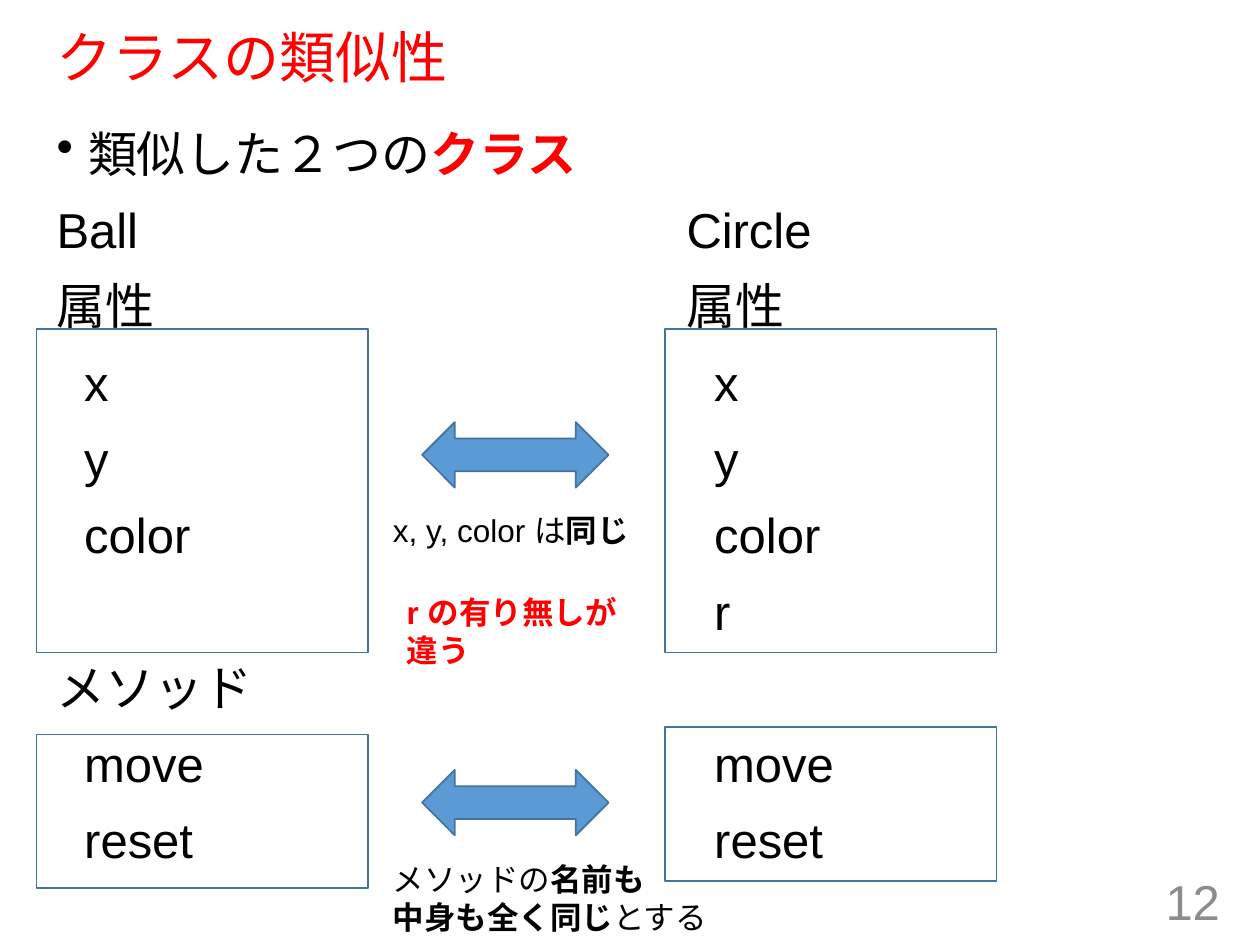
"""Build a slide comparing the similar classes Ball and Circle."""
import pptx
import pptx.util
import pptx.dml.color
import pptx.enum.shapes
import pptx.enum.text
import pptx.oxml.ns
from lxml import etree

Inches = pptx.util.Inches
Pt = pptx.util.Pt
SHAPE = pptx.enum.shapes.MSO_SHAPE
ALIGN = pptx.enum.text.PP_ALIGN
ANCHOR = pptx.enum.text.MSO_ANCHOR
RED, BLACK, GRAY = "FF0000", "000000", "8C8C8C"
BLUE, OUTLINE = "5B9BD5", "43739E"


def rgb(value):
    return pptx.dml.color.RGBColor.from_string(value)


def add_text(box, lines, size=18, align=ALIGN.LEFT, anchor=ANCHOR.TOP, before=0, bullet=False, stops=()):
    tf = s.shapes.add_textbox(*map(Inches, box)).text_frame
    tf.word_wrap = True
    tf.vertical_anchor = anchor
    for i, runs in enumerate(lines):
        p = tf.paragraphs[0] if i == 0 else tf.add_paragraph()
        pPr = p._p.get_or_add_pPr()
        if bullet and i == 0:
            pPr.set("marL", str(Inches(0.25)))
            pPr.set("indent", str(Inches(-0.25)))
            etree.SubElement(pPr, pptx.oxml.ns.qn("a:buChar"), char="•")
        elif stops:
            tabs = etree.SubElement(pPr, pptx.oxml.ns.qn("a:tabLst"))
            indent = runs[0][0].startswith("\t")
            for stop in stops if indent else stops[1:]:
                offset = 0 if indent else stops[0]
                etree.SubElement(tabs, pptx.oxml.ns.qn("a:tab"), pos=str(Inches(stop - offset)), algn="l")
        p.alignment = align
        p.line_spacing = Pt(round(size * 1.2, 1))
        p.space_before = Pt(before if i else 0)
        for text, color, bold in runs:
            r = p.add_run()
            r.text = text
            r.font.name = "Arial"
            r.font.size = Pt(size)
            r.font.bold = bold
            r.font.color.rgb = rgb(color)


prs = pptx.Presentation()
prs.slide_width, prs.slide_height = Inches(10), Inches(7.5)
s = prs.slides.add_slide(prs.slide_layouts[6])

add_text((0.35, 0.19, 9.25, 0.51), [[("クラスの類似性", RED, False)]], size=32, anchor=ANCHOR.MIDDLE)

rows = ["Ball\tCircle", "属性\t属性", "\tx\tx", "\ty\ty", "\tcolor\tcolor", "\t\tr",
        "メソッド", "\tmove\tmove", "\treset\treset"]
lines = [[("類似した２つの", BLACK, False), ("クラス", RED, True)]]
lines += [[(row, BLACK, False)] for row in rows]
add_text((0.35, 0.93, 9.25, 5.83), lines, size=28, before=10, bullet=True, stops=(0.22, 5.22))

add_text((7.53, 6.95, 2.25, 0.4), [[("12", GRAY, False)]], size=28, align=ALIGN.RIGHT, anchor=ANCHOR.MIDDLE)

shapes = [(SHAPE.RECTANGLE, x, y, 2.63, h)
          for x, y, h in [(0.29, 5.83, 1.22), (5.28, 5.77, 1.22), (5.28, 2.61, 2.57), (0.29, 2.61, 2.57)]]
shapes += [(SHAPE.LEFT_RIGHT_ARROW, 3.35, y, 1.48, 0.52) for y in (3.35, 6.11)]
for kind, *box in shapes:
    sp = s.shapes.add_shape(kind, *map(Inches, box))
    sp.shadow.inherit = False
    sp.line.color.rgb = rgb(OUTLINE)
    sp.line.width = Pt(1)
    if kind == SHAPE.RECTANGLE:
        sp.fill.background()
    else:
        sp.fill.solid()
        sp.fill.fore_color.rgb = rgb(BLUE)

add_text((3.02, 4.01, 2.25, 0.4), [[("x, y, color は", BLACK, False), ("同じ", BLACK, True)]])
add_text((3.13, 4.66, 2.1, 0.7), [[("r の有り無しが", RED, True)], [("違う", RED, True)]])
add_text((3.02, 6.78, 2.8, 0.7), [[("メソッドの", BLACK, False), ("名前も", BLACK, True)],
                                  [("中身も全く同じ", BLACK, True), ("とする", BLACK, False)]])

prs.save("out.pptx")
